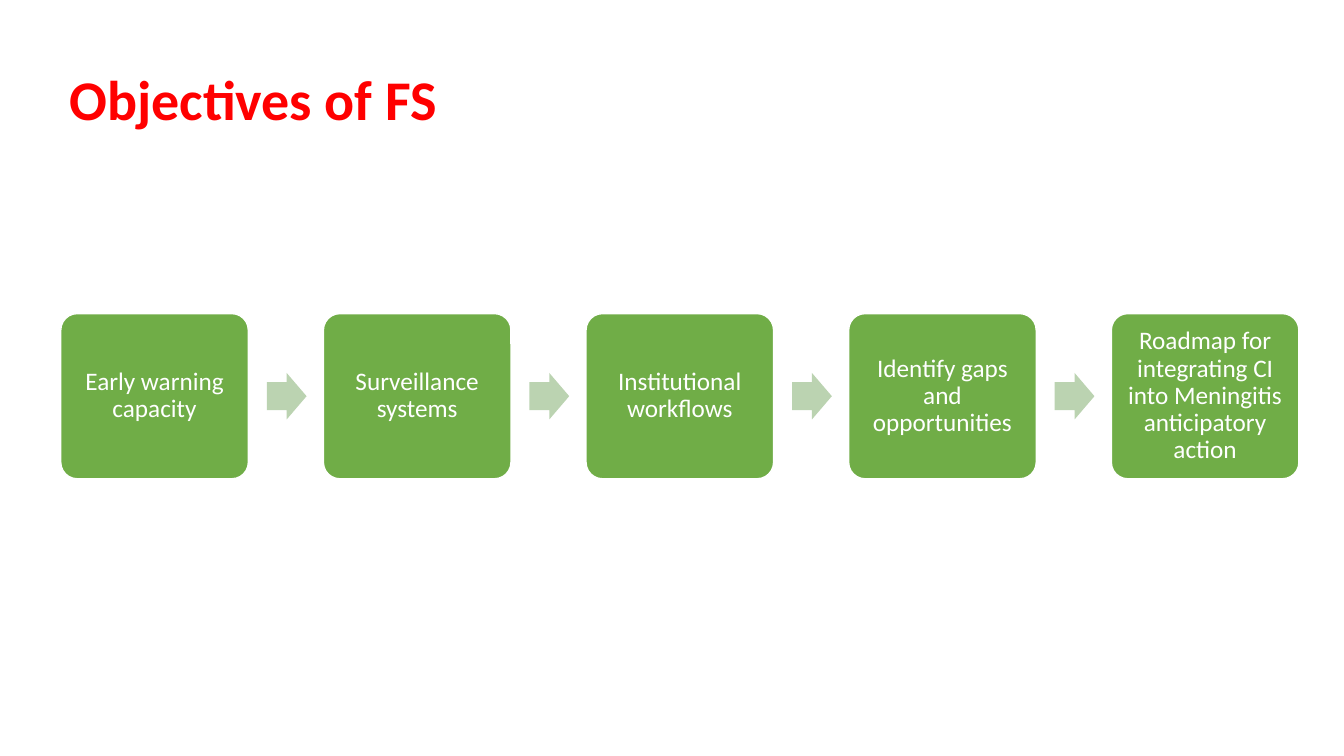
from dataclasses import dataclass

from pptx import Presentation
from pptx.dml.color import RGBColor
from pptx.enum.shapes import MSO_SHAPE
from pptx.enum.text import MSO_ANCHOR, PP_ALIGN
from pptx.util import Pt


@dataclass(frozen=True)
class Theme:
    font: str = "Calibri"
    title_size: int = 40
    card_size: int = 18
    title: RGBColor = RGBColor(0xFF, 0x00, 0x00)
    card: RGBColor = RGBColor(0x70, 0xAD, 0x47)
    arrow: RGBColor = RGBColor(0xBB, 0xD3, 0xB1)
    white: RGBColor = RGBColor(0xFF, 0xFF, 0xFF)


THEME = Theme()

OBJECTIVES = [
    "Early warning capacity",
    "Surveillance systems",
    "Institutional workflows",
    "Identify gaps and opportunities",
    "Roadmap for integrating CI into Meningitis anticipatory action",
]

ROW_LEFT, ROW_MIDDLE, STEP = 43.4, 283, 187.6
CARD_WIDTH, CARD_HEIGHT = 134, 118
ARROW_OFFSET, ARROW_WIDTH, ARROW_HEIGHT = 147.2, 28.4, 33.2


def set_values(target, values):
    for name, value in values.items():
        setattr(target, name, value)


def write_text(frame, text, size, color, bold=False):
    frame.word_wrap = True
    para = frame.paragraphs[0]
    span = para.add_run()
    span.text = text
    set_values(span.font, {"name": THEME.font, "size": Pt(size), "bold": bold})
    span.font.color.rgb = color
    return para


def add_title(page, text):
    box = page.shapes.add_textbox(Pt(42.5), Pt(42.5), Pt(665), Pt(55.5))
    write_text(box.text_frame, text, THEME.title_size, THEME.title, bold=True)


def add_row_shape(page, kind, left, width, height, fill, adjustments):
    """Add a filled shape centred vertically on the row of objectives."""
    shape = page.shapes.add_shape(
        kind, Pt(left), Pt(ROW_MIDDLE - height / 2), Pt(width), Pt(height))
    for index, value in enumerate(adjustments):
        shape.adjustments[index] = value
    shape.shadow.inherit = False
    shape.fill.solid()
    shape.fill.fore_color.rgb = fill
    shape.line.fill.background()
    return shape


def add_card(page, left, text):
    card = add_row_shape(page, MSO_SHAPE.ROUNDED_RECTANGLE, left,
                         CARD_WIDTH, CARD_HEIGHT, THEME.card, [0.1])
    card.line.color.rgb = THEME.white
    card.line.width = Pt(1)
    frame = card.text_frame
    set_values(frame, {
        "margin_left": Pt(5), "margin_right": Pt(5),
        "margin_top": Pt(5), "margin_bottom": Pt(5),
        "vertical_anchor": MSO_ANCHOR.MIDDLE,
    })
    para = write_text(frame, text, THEME.card_size, THEME.white)
    set_values(para, {"alignment": PP_ALIGN.CENTER, "line_spacing": 0.9})


def add_arrow(page, left):
    add_row_shape(page, MSO_SHAPE.RIGHT_ARROW, left,
                  ARROW_WIDTH, ARROW_HEIGHT, THEME.arrow, [0.6, 0.5])


def main():
    deck = Presentation()
    set_values(deck, {"slide_width": Pt(960), "slide_height": Pt(540)})
    page = deck.slides.add_slide(deck.slide_layouts[6])
    add_title(page, "Objectives of FS")
    for index, objective in enumerate(OBJECTIVES):
        left = ROW_LEFT + index * STEP
        if index:
            add_arrow(page, left - STEP + ARROW_OFFSET)
        add_card(page, left, objective)
    deck.save("out.pptx")


if __name__ == "__main__":
    main()
